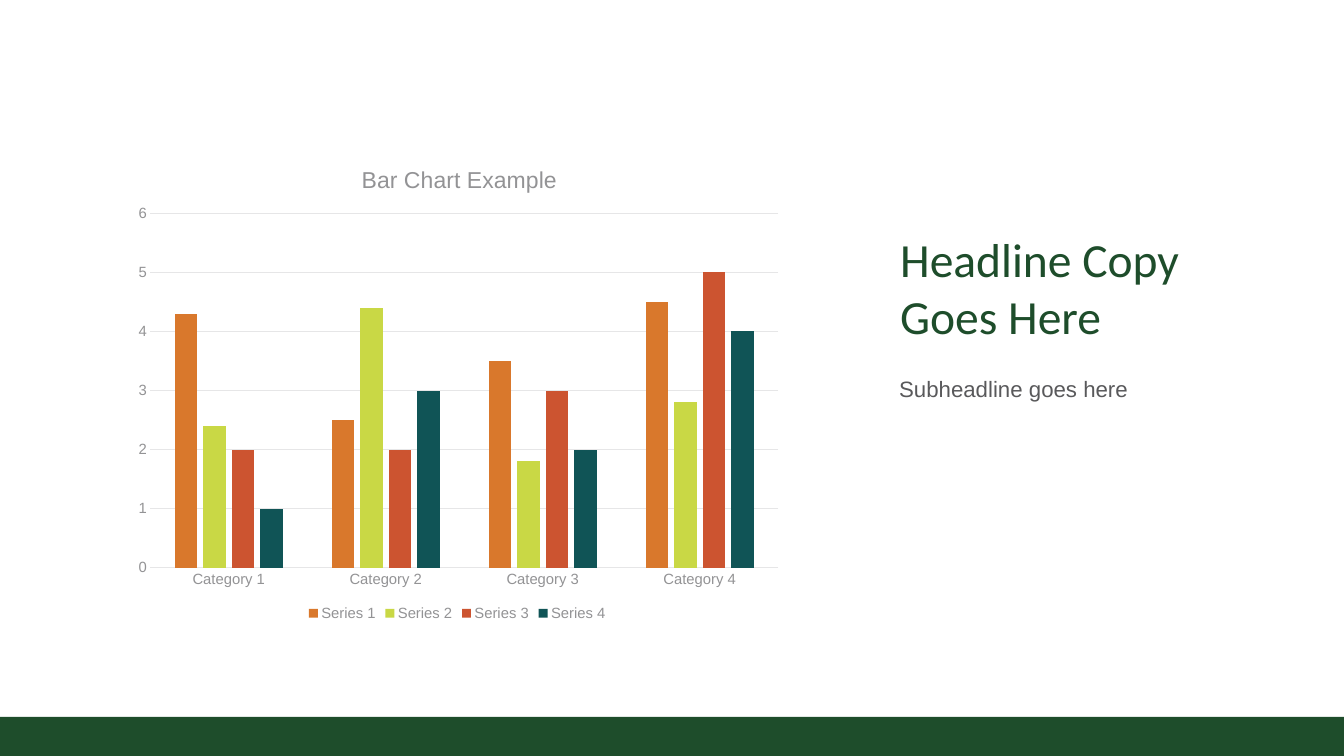
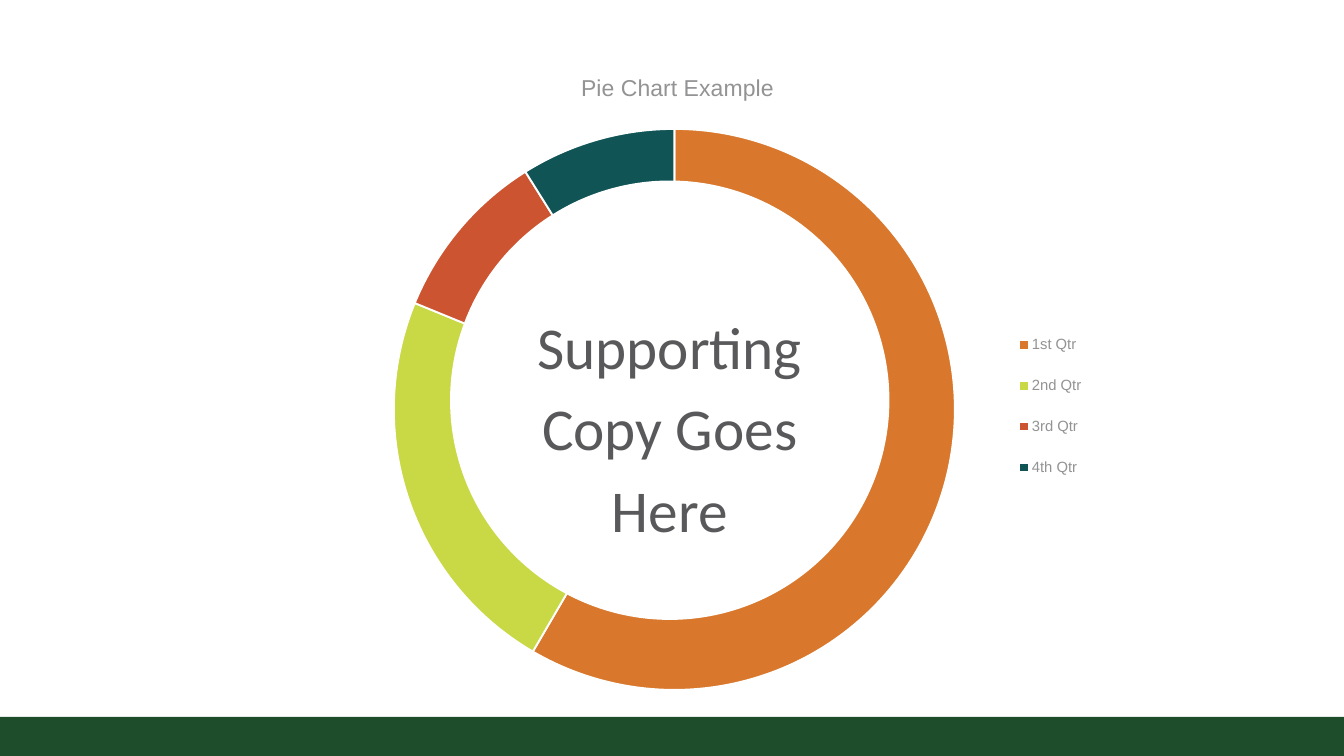
from lxml.etree import SubElement
from pptx import Presentation
from pptx.chart.data import CategoryChartData
from pptx.dml.color import RGBColor
from pptx.enum.chart import XL_CHART_TYPE, XL_LEGEND_POSITION, XL_TICK_MARK
from pptx.enum.shapes import MSO_SHAPE
from pptx.enum.text import PP_ALIGN
from pptx.oxml.ns import qn
from pptx.util import Inches, Pt

WIDTH, HEIGHT = 15.11, 8.5
GREEN, TEXT, MUTED, GRID, WHITE = "1E4D2B", "59595B", "939395", "E6E6E7", "FFFFFF"
PALETTE = ["D9782C", "C9D845", "CC5430", "105456"]
HEADING, BODY = "Calibri", "Arial"


def color(value):
    return RGBColor.from_string(value)


def apply(target, values):
    for name, value in values.items():
        setattr(target, name, value)


def set_font(font, name, size, ink):
    apply(font, {"name": name, "size": Pt(size), "bold": False})
    font.color.rgb = color(ink)


def set_line(line, ink, points):
    line.color.rgb = color(ink)
    line.width = Pt(points)


def place(element, index, position, inner=False):
    """Place a chart part by shares of the chart's size: x, y and optionally w, h."""
    for old in element.findall(qn("c:layout")):
        element.remove(old)
    layout = element.makeelement(qn("c:layout"), {})
    element.insert(index, layout)
    manual = SubElement(layout, qn("c:manualLayout"))
    settings = [("layoutTarget", "inner")] if inner else []
    settings += [("xMode", "edge"), ("yMode", "edge")]
    settings += zip("xywh", position)
    for tag, value in settings:
        SubElement(manual, qn(f"c:{tag}")).set("val", str(value))


class Deck:
    """Holds the shared style and the current page; boxes are percent of the slide."""

    def __init__(self):
        self.deck = Presentation()
        self.deck.slide_width = Inches(WIDTH)
        self.deck.slide_height = Inches(HEIGHT)
        self.page = None

    def new_page(self):
        self.page = self.deck.slides.add_slide(self.deck.slide_layouts[6])
        self.shape(MSO_SHAPE.RECTANGLE, (0, 94.82, 100, 5.18), GREEN)

    def box(self, shares):
        sizes = (WIDTH, HEIGHT, WIDTH, HEIGHT)
        return [Inches(size * share / 100) for size, share in zip(sizes, shares)]

    def shape(self, kind, shares, fill):
        shape = self.page.shapes.add_shape(kind, *self.box(shares))
        shape.shadow.inherit = False
        shape.fill.solid()
        shape.fill.fore_color.rgb = color(fill)
        shape.line.fill.background()

    def text(self, shares, words, font, size, ink, insets=(0.11, 0.06), **layout):
        frame = self.page.shapes.add_textbox(*self.box(shares)).text_frame
        across, down = map(Inches, insets)
        apply(frame, {"word_wrap": True, "margin_left": across, "margin_right": across,
                      "margin_top": down, "margin_bottom": down})
        para = frame.paragraphs[0]
        para.text = words
        apply(para, layout)
        for span in para.runs:
            set_font(span.font, font, size, ink)

    def chart(self, kind, shares, title, categories, series, plot, title_at, legend_at):
        data = CategoryChartData()
        data.categories = categories
        for name, values in series.items():
            data.add_series(name, values)
        chart = self.page.shapes.add_chart(kind, *self.box(shares), data).chart
        set_font(chart.font, BODY, 10, TEXT)
        # Title and legend
        chart.has_title = True
        frame = chart.chart_title.text_frame
        frame.text = title
        set_font(frame.paragraphs[0].runs[0].font, BODY, 18.6, MUTED)
        chart.has_legend = True
        apply(chart.legend, {"position": XL_LEGEND_POSITION.BOTTOM,
                             "include_in_layout": False})
        set_font(chart.legend.font, BODY, 12, MUTED)
        # Positions within the chart
        place(chart.chart_title._element, 1, title_at)
        place(chart.legend._element, 1, legend_at)
        place(chart._chartSpace.chart.plotArea, 0, plot, inner=True)
        return chart

    def columns(self, *content):
        chart = self.chart(XL_CHART_TYPE.COLUMN_CLUSTERED, *content)
        apply(chart.plots[0], {"gap_width": 219, "overlap": -27,
                               "vary_by_categories": False})
        for series, fill in zip(chart.plots[0].series, PALETTE):
            series.format.fill.solid()
            series.format.fill.fore_color.rgb = color(fill)
        for axis in (chart.category_axis, chart.value_axis):
            apply(axis, {"major_tick_mark": XL_TICK_MARK.NONE,
                         "minor_tick_mark": XL_TICK_MARK.NONE})
            set_font(axis.tick_labels.font, BODY, 12, MUTED)
        set_line(chart.category_axis.format.line, GRID, 0.75)
        apply(chart.value_axis, {"minimum_scale": 0, "maximum_scale": 6, "major_unit": 1})
        chart.value_axis.format.line.fill.background()
        set_line(chart.value_axis.major_gridlines.format.line, GRID, 0.75)

    def pie(self, *content):
        chart = self.chart(XL_CHART_TYPE.PIE, *content)
        chart.plots[0].vary_by_categories = True
        for index, fill in enumerate(PALETTE):
            slice_format = chart.plots[0].series[0].points[index].format
            slice_format.fill.solid()
            slice_format.fill.fore_color.rgb = color(fill)
            set_line(slice_format.line, WHITE, 1.5)


def main():
    show = Deck()

    # Column chart with headline
    show.new_page()
    show.text((66.25, 29.76, 29.25, 16.59), "Headline Copy Goes Here", HEADING, 38.5, GREEN)
    show.text((66.25, 48, 29.25, 12.47), "Subheadline goes here", BODY, 18, TEXT,
              insets=(0.1, 0.1), line_spacing=1.14, space_after=Pt(6))
    show.columns(
        (9.2, 18.59, 49.7, 64.24), "Bar Chart Example",
        [f"Category {number}" for number in range(1, 5)],
        {"Series 1": (4.3, 2.5, 3.5, 4.5), "Series 2": (2.4, 4.4, 1.8, 2.8),
         "Series 3": (2, 2, 3, 5), "Series 4": (1, 3, 2, 4)},
        (0.04, 0.15, 0.94, 0.73), (0.35, 0.04), (0.27, 0.95))

    # Ring: a pie with a white disc that carries the supporting copy
    show.new_page()
    show.pie(
        (15.29, 8.12, 69.09, 89.41), "Pie Chart Example",
        ["1st Qtr", "2nd Qtr", "3rd Qtr", "4th Qtr"], {"Series 1": (59, 23, 10, 9)},
        (0.2, 0.1, 0.61, 0.83), (0.4, 0.01), (0.87, 0.37, 0.08, 0.28))
    show.shape(MSO_SHAPE.OVAL, (33.49, 23.88, 32.69, 58.12), WHITE)
    show.text((35.21, 39.06, 29.25, 32.94), "Supporting\vCopy Goes\vHere", HEADING, 48, TEXT,
              alignment=PP_ALIGN.CENTER, line_spacing=1.14)

    show.deck.save("out.pptx")


if __name__ == "__main__":
    main()
